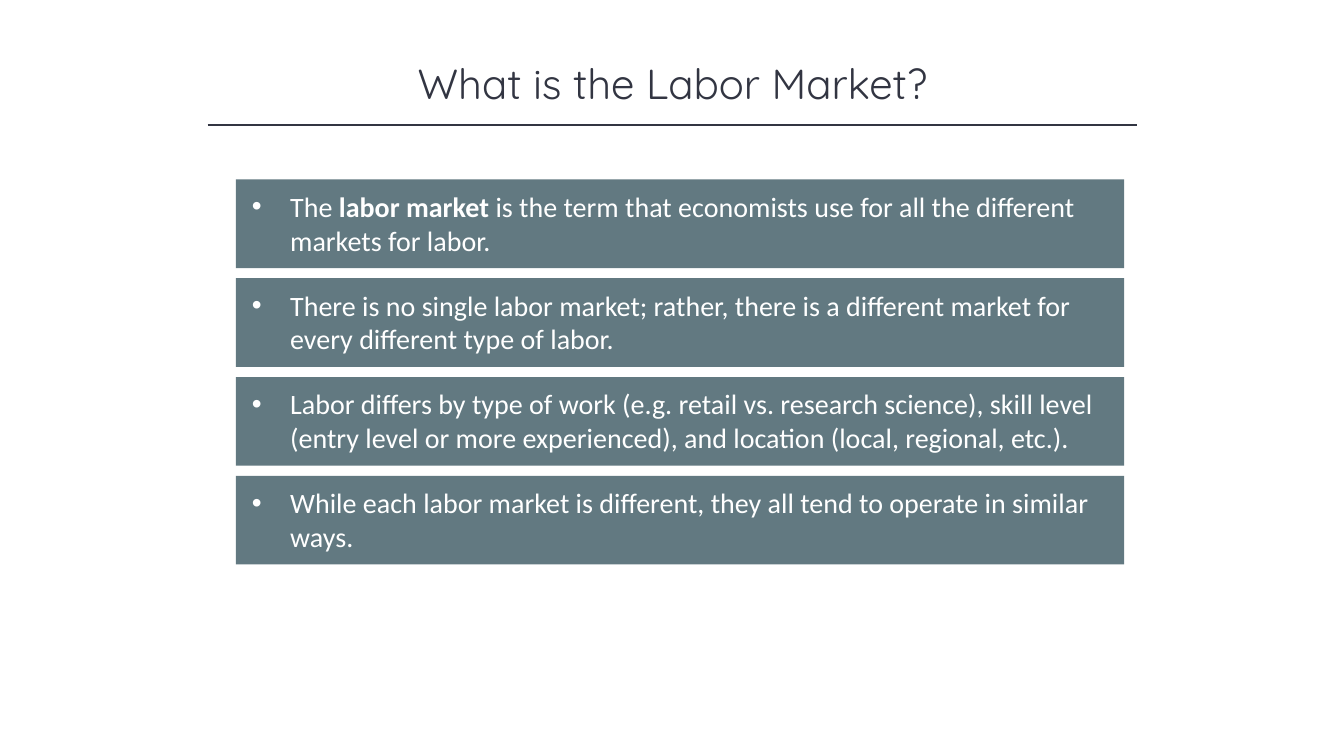
"""Build the slide that explains the labor market in four bulleted bars."""
from lxml.etree import SubElement
from pptx import Presentation
from pptx.dml.color import RGBColor
from pptx.enum.shapes import MSO_CONNECTOR, MSO_SHAPE
from pptx.enum.text import MSO_ANCHOR, PP_ALIGN
from pptx.oxml.ns import qn
from pptx.util import Inches, Pt

INK = RGBColor(0x32, 0x35, 0x42)
SLATE = RGBColor(0x62, 0x79, 0x81)
WHITE = RGBColor(0xFF, 0xFF, 0xFF)

POINTS = [
    [("The ", False), ("labor market ", True),
     ("is the term that economists use for all the different markets for labor.", False)],
    [("There is no single labor market; rather, there is a different market for "
      "every different type of labor.", False)],
    [("Labor differs by type of work (e.g. retail vs. research science), skill level "
      "(entry level or more experienced), and location (local, regional, etc.).", False)],
    [("While each labor market is different, they all tend to operate in similar ways.", False)],
]


def write(shape, runs, font, size, color, align=PP_ALIGN.LEFT, bullet=False):
    frame = shape.text_frame
    frame.word_wrap = True
    frame.vertical_anchor = MSO_ANCHOR.TOP
    para = frame.paragraphs[0]
    para.alignment = align
    for text, bold in runs:
        run = para.add_run()
        run.text = text
        run.font.name = font
        run.font.size = Pt(size)
        run.font.bold = bold
        run.font.color.rgb = color
    if bullet:
        props = para._p.get_or_add_pPr()
        props.set("marL", str(Inches(0.38)))
        props.set("indent", str(Inches(-0.38)))
        SubElement(props, qn("a:buFont"), typeface="Arial")
        SubElement(props, qn("a:buChar"), char="•")


def block(group, left, top, width, height):
    shape = group.shapes.add_shape(
        MSO_SHAPE.RECTANGLE, Inches(left), Inches(top), Inches(width), Inches(height))
    shape.shadow.inherit = False
    shape.fill.solid()
    shape.fill.fore_color.rgb = SLATE
    shape.line.fill.background()
    return shape


deck = Presentation()
deck.slide_width = Inches(13.33)
deck.slide_height = Inches(7.5)
slide = deck.slides.add_slide(deck.slide_layouts[5])

title = slide.shapes.title
title.left, title.top = Inches(1.67), Inches(0.52)
title.width, title.height = Inches(10), Inches(0.61)
write(title, [("What is the Labor Market?", False)],
      font="Quicksand", size=30, color=INK, align=PP_ALIGN.CENTER)

rule = slide.shapes.add_connector(
    MSO_CONNECTOR.STRAIGHT, Inches(2.06), Inches(1.24), Inches(11.28), Inches(1.24))
rule.line.color.rgb = INK
rule.line.width = Pt(1)
SubElement(rule._element.spPr, qn("a:effectLst"))

for row, runs in enumerate(POINTS):
    top = 1.78 + 0.98 * row
    group = slide.shapes.add_group_shape()
    block(group, 2.34, top, 8.81, 0.88)
    label = block(group, 2.4, top + 0.05, 8.6, 0.77)
    write(label, runs, font="Calibri", size=20, color=WHITE, bullet=True)

deck.save("out.pptx")
